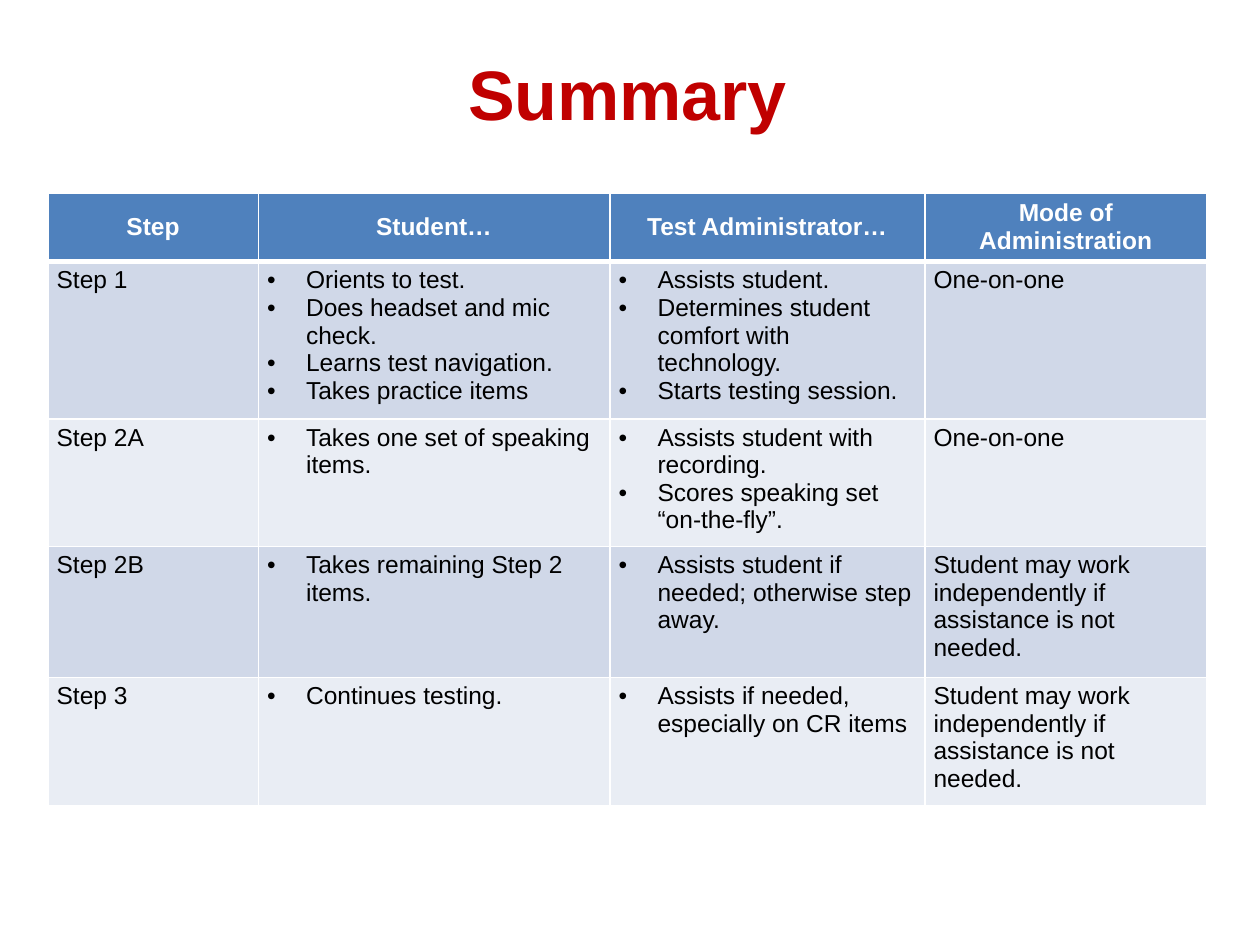
from lxml import etree
from pptx import Presentation
from pptx import util as u
from pptx.dml.color import RGBColor
from pptx.enum import text as t
from pptx.oxml import ns

TITLE = "Summary"
HEADS = ["Step", "Student…", "Test Administrator…", "Mode of Administration"]
ALONE = "One-on-one"
FREE = "Student may work independently if assistance is not needed."
# A list becomes bullets, a string a plain paragraph.
ROWS = [
    ["Step 1",
     ["Orients to test.", "Does headset and mic check.",
      "Learns test navigation.", "Takes practice items"],
     ["Assists student.", "Determines student comfort with technology.",
      "Starts testing session."],
     ALONE],
    ["Step 2A",
     ["Takes one set of speaking items."],
     ["Assists student with recording.", "Scores speaking set “on-the-fly”."],
     ALONE],
    ["Step 2B",
     ["Takes remaining Step 2 items."],
     ["Assists student if needed; otherwise step away."],
     FREE],
    ["Step 3",
     ["Continues testing."],
     ["Assists if needed, especially on CR items"],
     FREE],
]
WIDTHS = [1.67, 2.79, 2.5, 2.24]
HEIGHTS = [0.51, 1.17, 0.97, 1.04, 0.95]
THEME = {
    "font": "Arial", "title": 40, "body": 14,
    "red": "C00000", "white": "FFFFFF", "black": "000000",
    "head": "4F81BD", "bands": ["D0D8E8", "E9EDF4"],
}
EDGES = {"lnL": 1, "lnR": 1, "lnT": 1, "lnB": 3}
INDENT = 0.31


def add(parent, tag, **attrs):
    return etree.SubElement(parent, ns.qn(tag), attrs)


def write(frame, words, size=THEME["body"], color=THEME["black"],
          bold=False, align=t.PP_ALIGN.LEFT):
    """Fill a text frame; a list of words is set as bullets."""
    listed = isinstance(words, list)
    for i, line in enumerate(words if listed else [words]):
        para = frame.add_paragraph() if i else frame.paragraphs[0]
        para.alignment = align
        if listed:
            props = para._p.get_or_add_pPr()
            props.set("marL", str(u.Inches(INDENT)))
            props.set("indent", str(u.Inches(-INDENT)))
            add(props, "a:buFont", typeface=THEME["font"])
            add(props, "a:buChar", char="•")
        run = para.add_run()
        run.text = line
        font = run.font
        font.name, font.size, font.bold = THEME["font"], u.Pt(size), bold
        font.color.rgb = RGBColor.from_string(color)


def edge(cell):
    props = cell._tc.get_or_add_tcPr()
    for side, width in EDGES.items():
        line = add(props, f"a:{side}", w=str(u.Pt(width)))
        fill = add(line, "a:solidFill")
        add(fill, "a:srgbClr", val=THEME["white"])


def paint(cell, color):
    cell.margin_left = cell.margin_right = u.Inches(0.07)
    cell.margin_top = cell.margin_bottom = u.Inches(0.04)
    cell.fill.solid()
    cell.fill.fore_color.rgb = RGBColor.from_string(color)


def add_title(slide):
    box = slide.shapes.add_textbox(*map(u.Inches, (0.48, 0.4, 9, 0.67)))
    frame = box.text_frame
    frame.word_wrap = True
    frame.margin_left = frame.margin_right = 0
    frame.margin_top = frame.margin_bottom = 0
    write(frame, TITLE, size=THEME["title"], color=THEME["red"], bold=True,
          align=t.PP_ALIGN.CENTER)


def add_steps(slide):
    place = (0.38, 1.53, sum(WIDTHS), sum(HEIGHTS))
    table = slide.shapes.add_table(
        len(HEIGHTS), len(WIDTHS), *map(u.Inches, place)).table
    for col, width in zip(table.columns, WIDTHS):
        col.width = u.Inches(width)
    for row, height in zip(table.rows, HEIGHTS):
        row.height = u.Inches(height)
    for c, words in enumerate(HEADS):
        cell = table.cell(0, c)
        edge(cell)
        paint(cell, THEME["head"])
        cell.vertical_anchor = t.MSO_ANCHOR.MIDDLE
        write(cell.text_frame, words, color=THEME["white"], bold=True,
              align=t.PP_ALIGN.CENTER)
    for r, row in enumerate(ROWS):
        for c, words in enumerate(row):
            cell = table.cell(r + 1, c)
            paint(cell, THEME["bands"][r % 2])
            write(cell.text_frame, words)


def main():
    deck = Presentation()
    deck.slide_width, deck.slide_height = u.Inches(10), u.Inches(7.5)
    slide = deck.slides.add_slide(deck.slide_layouts[6])
    add_title(slide)
    add_steps(slide)
    deck.save("out.pptx")


if __name__ == "__main__":
    main()
